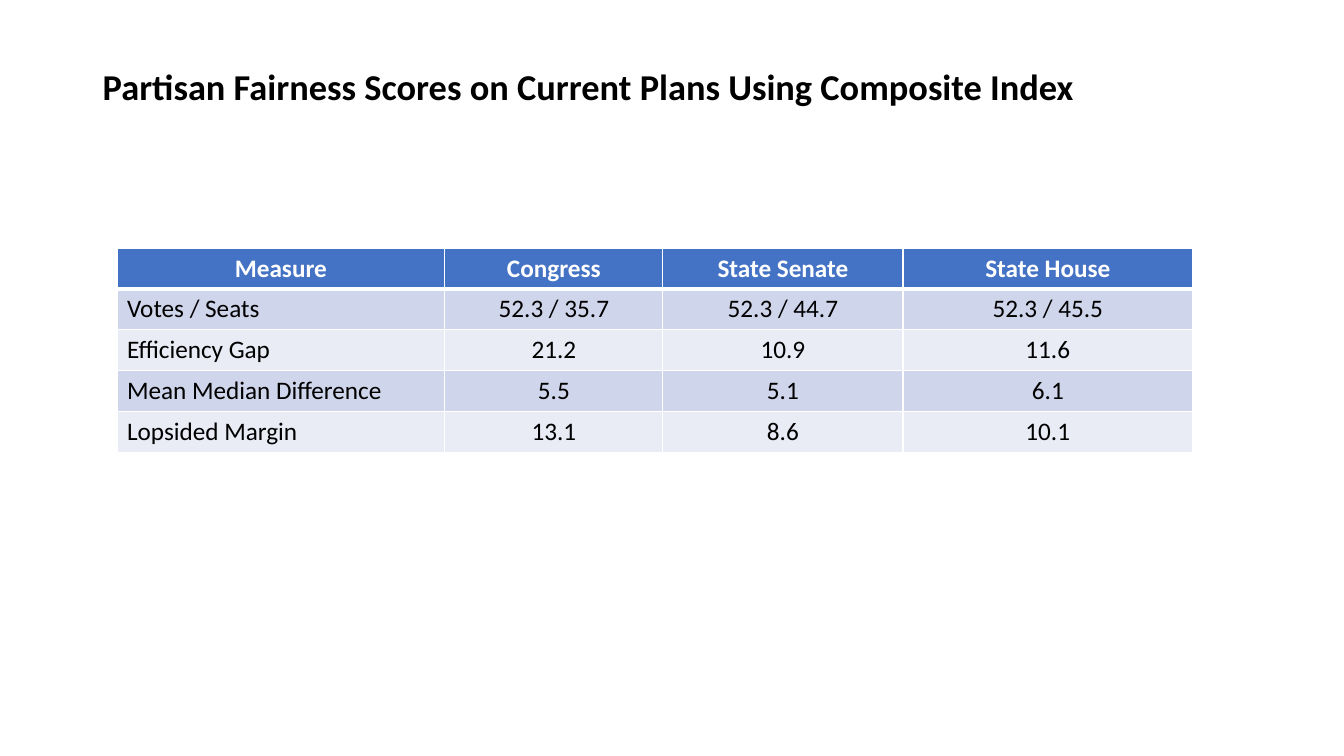
from lxml import etree
from pptx import Presentation
from pptx import util as u
from pptx.dml.color import RGBColor
from pptx.enum import text
from pptx.oxml import ns

COLORS = {
    "ink": "000000",
    "white": "FFFFFF",
    "header": "4472C4",
    "odd": "CFD5EA",
    "even": "E9EBF5",
}
FONT = "Calibri"
HEADING = "Partisan Fairness Scores on Current Plans Using Composite Index"
SCORES = [
    ["Measure", "Congress", "State Senate", "State House"],
    ["Votes / Seats", "52.3 / 35.7", "52.3 / 44.7", "52.3 / 45.5"],
    ["Efficiency Gap", "21.2", "10.9", "11.6"],
    ["Mean Median Difference", "5.5", "5.1", "6.1"],
    ["Lopsided Margin", "13.1", "8.6", "10.1"],
]
MEASURE_WIDTHS = [3.25, 2.16, 2.38, 2.87]


def add_words(paragraph, words, size, color, bold):
    run = paragraph.add_run()
    run.text = words
    run.font.name = FONT
    run.font.size = u.Pt(size)
    run.font.bold = bold
    run.font.color.rgb = RGBColor.from_string(COLORS[color])


def set_borders(cell, widths):
    properties = cell._tc.get_or_add_tcPr()
    for position, (side, width) in enumerate(widths.items()):
        line = etree.Element(ns.qn(f"a:ln{side}"), w=str(u.Pt(width)))
        fill = etree.SubElement(line, ns.qn("a:solidFill"))
        etree.SubElement(fill, ns.qn("a:srgbClr"), val=COLORS["white"])
        properties.insert(position, line)


def add_heading(slide, left, top, width, height):
    heading = slide.shapes.add_textbox(*map(u.Inches, (left, top, width, height)))
    frame = heading.text_frame
    frame.word_wrap = True
    frame.vertical_anchor = text.MSO_ANCHOR.MIDDLE
    paragraph = frame.paragraphs[0]
    paragraph.line_spacing = 0.9
    add_words(paragraph, HEADING, 26, "ink", True)


def add_scores(slide, left, top, width, height):
    scores = slide.shapes.add_table(
        len(SCORES), len(SCORES[0]), *map(u.Inches, (left, top, width, height))
    ).table
    for column, share in zip(scores.columns, MEASURE_WIDTHS):
        column.width = u.Inches(width * share / sum(MEASURE_WIDTHS))
    for row, entries in enumerate(SCORES):
        is_header = row == 0
        band = "header" if is_header else "odd" if row % 2 else "even"
        borders = {"L": 1, "R": 1, "T": 3 if row == 1 else 1, "B": 3 if is_header else 1}
        for column, entry in enumerate(entries):
            cell = scores.cell(row, column)
            cell.fill.solid()
            cell.fill.fore_color.rgb = RGBColor.from_string(COLORS[band])
            set_borders(cell, borders)
            paragraph = cell.text_frame.paragraphs[0]
            centred = is_header or column > 0
            paragraph.alignment = text.PP_ALIGN.CENTER if centred else text.PP_ALIGN.LEFT
            add_words(paragraph, entry, 18, "white" if is_header else "ink", is_header)


def main():
    deck = Presentation()
    deck.slide_width, deck.slide_height = u.Inches(13.33), u.Inches(7.5)
    slide = deck.slides.add_slide(deck.slide_layouts[6])
    add_heading(slide, 0.92, 0.4, 11.5, 0.96)
    add_scores(slide, 1.16, 2.46, 10.67, 2.03)
    deck.save("out.pptx")


if __name__ == "__main__":
    main()
